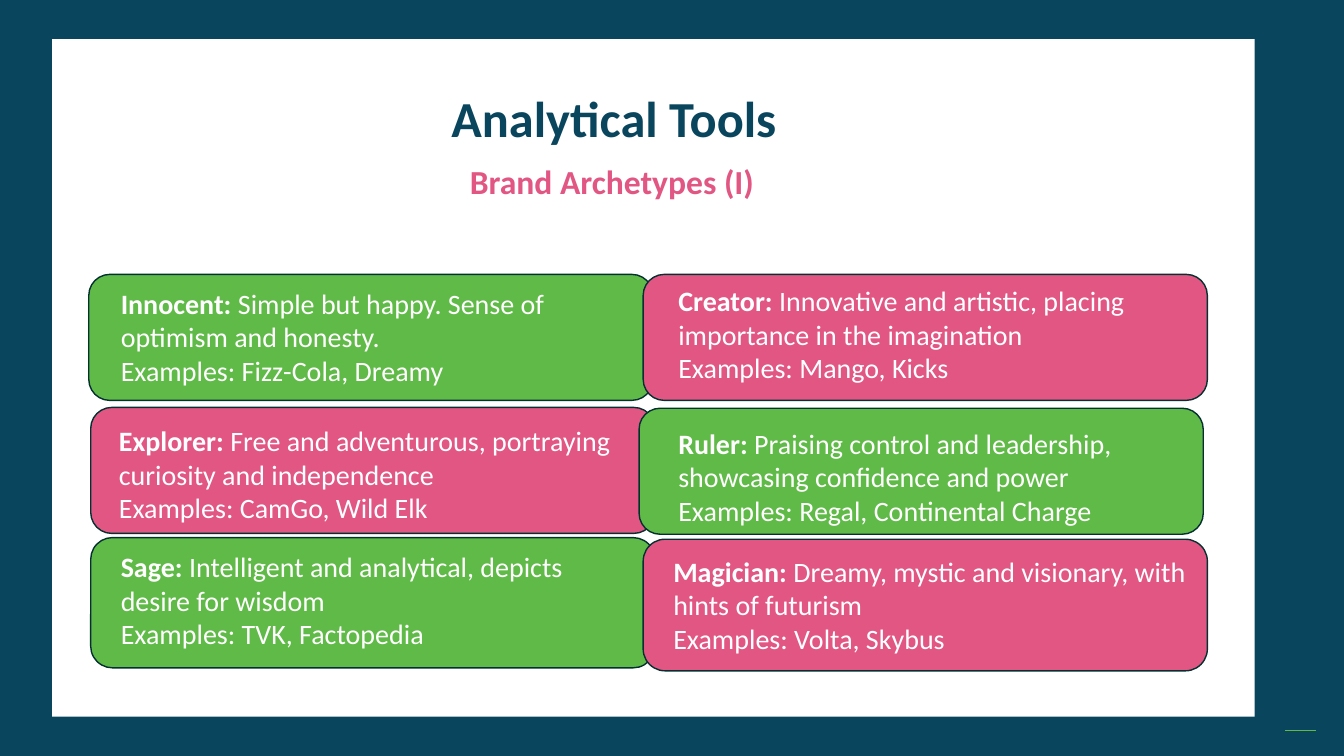
from pptx import Presentation
from pptx.dml.color import RGBColor
from pptx.enum.shapes import MSO_CONNECTOR as Line, MSO_SHAPE as Shape
from pptx.enum.text import PP_ALIGN as Align
from pptx.oxml.ns import qn
from pptx.util import Pt
from lxml.etree import SubElement

NAVY = RGBColor(0x09, 0x46, 0x5E)
WHITE = RGBColor(0xFF, 0xFF, 0xFF)
GREEN = RGBColor(0x60, 0xBA, 0x47)
PINK = RGBColor(0xE2, 0x56, 0x84)
EDGE = RGBColor(0x04, 0x30, 0x30)
FONT = "Calibri"

# Each card: box, fill, text offset and width, name, description, examples
CARDS = [
    ((63.4, 196, 403, 90), GREEN, (15.8, 5, 377), "Innocent: ",
     "Simple but happy. Sense of optimism and honesty.", "Fizz-Cola, Dreamy"),
    ((64.8, 291, 403, 90), PINK, (13, 8, 400), "Explorer: ",
     "Free and adventurous, portraying curiosity and independence",
     "CamGo, Wild Elk"),
    ((64.8, 384, 403, 93), GREEN, (14.4, 5, 380), "Sage: ",
     "Intelligent and analytical, depicts desire for wisdom",
     "TVK, Factopedia"),
    ((459.4, 196, 403, 90), PINK, (18, 2.9, 400), "Creator: ",
     "Innovative and artistic, placing importance in the imagination",
     "Mango, Kicks"),
    ((456.5, 291.6, 403, 90), GREEN, (20.9, 9.4, 400), "Ruler: ",
     "Praising control and leadership, showcasing confidence and power",
     "Regal, Continental Charge"),
    ((459.4, 385.2, 403, 94), PINK, (14.4, 7.2, 400), "Magician: ",
     "Dreamy, mystic and visionary, with hints of futurism",
     "Volta, Skybus"),
]


def place(box):
    return [Pt(n) for n in box]


def style(run, size, color, bold=False):
    font = run.font
    font.name, font.size, font.bold = FONT, Pt(size), bold
    font.color.rgb = color


def block(slide, kind, box, fill, edge=None):
    shape = slide.shapes.add_shape(kind, *place(box))
    shape.shadow.inherit = False
    shape.fill.solid()
    shape.fill.fore_color.rgb = fill
    if edge is None:
        shape.line.fill.background()
    else:
        shape.line.color.rgb = edge
        shape.line.width = Pt(1)


def label(slide, box, paras, size, color, align=Align.LEFT):
    """Adds a text box; each paragraph is a list of (text, bold) runs."""
    frame = slide.shapes.add_textbox(*place(box)).text_frame
    frame.word_wrap = True
    for i, runs in enumerate(paras):
        para = frame.add_paragraph() if i else frame.paragraphs[0]
        para.alignment = align
        for text, bold in runs:
            run = para.add_run()
            run.text = text
            style(run, size, color, bold)
    return frame


def backdrop(slide, box):
    left, top, width, height = box
    block(slide, Shape.RECTANGLE, box, NAVY)
    block(slide, Shape.RECTANGLE, (left + 37.3, top + 28, 859, 484), WHITE)
    y = top + height - 18
    dash = slide.shapes.add_connector(
        Line.STRAIGHT, *place((left + width - 42, y, left + width - 19.7, y)))
    dash.line.color.rgb = GREEN
    dash.line.width = Pt(1)
    SubElement(dash._element.spPr, qn("a:effectLst"))


def heading(slide, box):
    left, top, width, height = box
    title = label(slide, box, [[("Analytical Tools", True)]], 36, NAVY)
    title.paragraphs[0].line_spacing = 0.9
    label(slide, (left + 7.2, top + 48.2, 229, 36),
          [[("Brand Archetypes (I)", True)]], 24, PINK, Align.CENTER)


def card(slide, box, fill, inset, name, about, brands):
    left, top = box[:2]
    dx, dy, width = inset
    block(slide, Shape.ROUNDED_RECTANGLE, box, fill, EDGE)
    label(slide, (left + dx, top + dy, width, 80),
          [[(name, True), (about, False)], [("Examples: " + brands, False)]],
          20, WHITE)


def main():
    deck = Presentation()
    deck.slide_width, deck.slide_height = Pt(960), Pt(540)
    slide = deck.slides.add_slide(deck.slide_layouts[6])
    backdrop(slide, (0, 0, 960, 540))
    heading(slide, (315.4, 63.4, 332, 95))
    for item in CARDS:
        card(slide, *item)
    deck.save("out.pptx")


if __name__ == "__main__":
    main()
